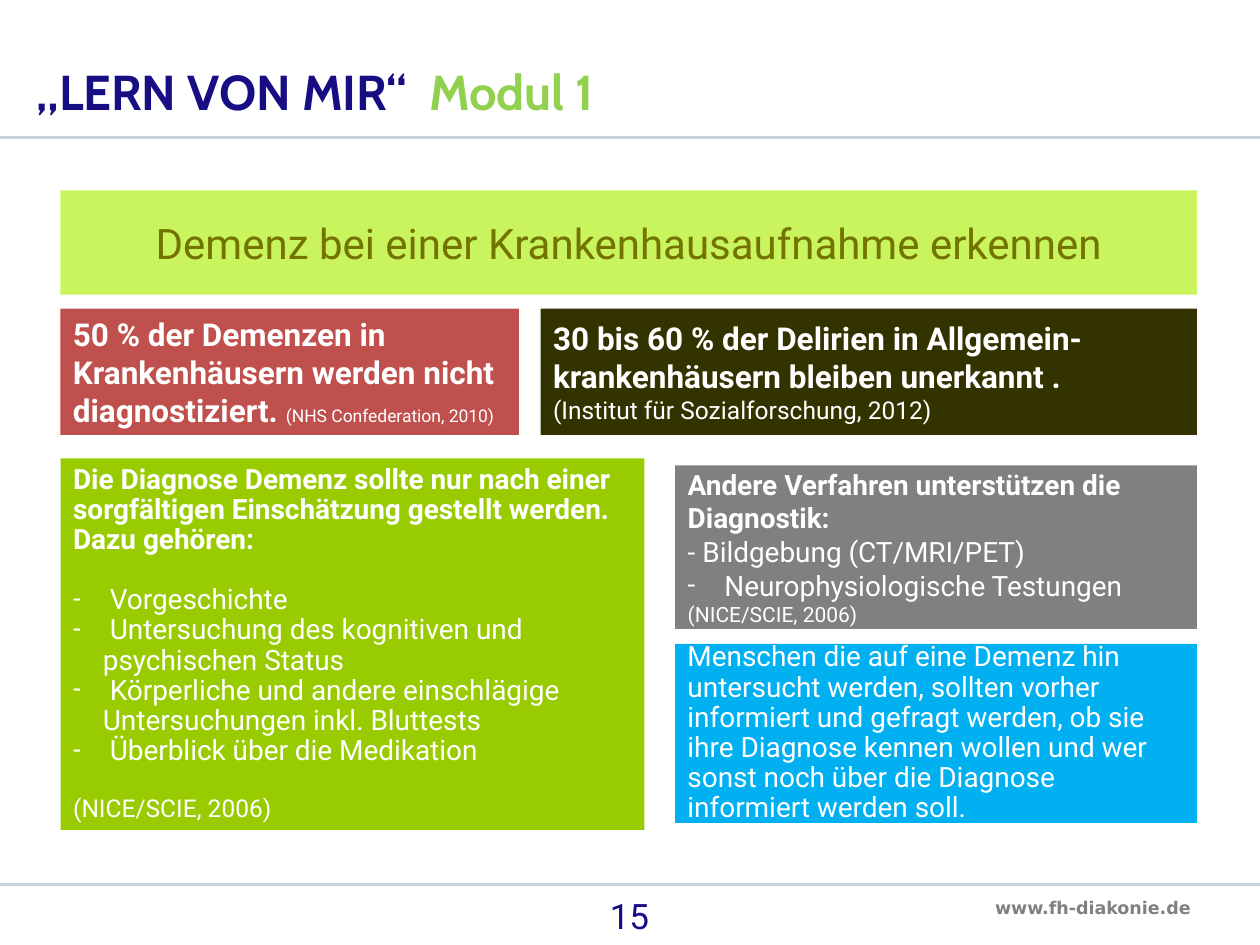
from lxml import etree
from pptx import Presentation, util as u
from pptx.dml.color import RGBColor
from pptx.enum import shapes, text
from pptx.oxml.ns import qn

NAVY = RGBColor(0x17, 0x0E, 0x83)
LIGHT_GREEN = RGBColor(0x92, 0xD0, 0x50)
LIME = RGBColor(0xC9, 0xF4, 0x5E)
OLIVE = RGBColor(0x73, 0x73, 0x00)
RED = RGBColor(0xC0, 0x50, 0x4D)
DARK_OLIVE = RGBColor(0x33, 0x33, 0x00)
GREEN = RGBColor(0x99, 0xCC, 0x00)
GREY = RGBColor(0x80, 0x80, 0x80)
BLUE = RGBColor(0x00, 0xB0, 0xF0)
RULE = RGBColor(0xC8, 0xD2, 0xDC)
WHITE = RGBColor(0xFF, 0xFF, 0xFF)

# Layout in centimetres
SLIDE_WIDTH, SLIDE_HEIGHT = 25.4, 19.05
LEFT, RIGHT = 1.22, 24.13
RIGHT_COLUMN = 13.61
DELIRIUM_LEFT = 10.9
RULES = (2.77, 17.83)
TITLE_TAB = 7.92
BULLET_INDENT = 0.6
GAP = 17  # points, one line of body text

# Content: a paragraph is a list of runs (text, size, bold)
TITLE = [("„LERN VON MIR“\t", NAVY), ("Modul 1", LIGHT_GREEN)]
HEADLINE = [[("Demenz bei einer Krankenhausaufnahme erkennen", 24, False)]]
DEMENTIA = [[("50 % der Demenzen in Krankenhäusern werden nicht diagnostiziert. ", 18, True),
             ("(NHS Confederation, 2010)", 10, False)]]
DELIRIUM = [
    [("30 bis 60 % der Delirien in Allgemein-krankenhäusern bleiben unerkannt .", 18, True)],
    [("(Institut für Sozialforschung, 2012)", 14, False)],
]
ASSESSMENT = [
    [("Die Diagnose Demenz sollte nur nach einer sorgfältigen Einschätzung "
      "gestellt werden. Dazu gehören:", 16, True)],
    [(" Vorgeschichte", 16, False)],
    [(" Untersuchung des kognitiven und psychischen Status", 16, False)],
    [(" Körperliche und andere einschlägige Untersuchungen inkl. Bluttests", 16, False)],
    [(" Überblick über die Medikation", 16, False)],
    [("(NICE/SCIE, 2006)", 14, False)],
]
METHODS = [
    [("Andere Verfahren unterstützen die Diagnostik:", 16, True)],
    [("- Bildgebung (CT/MRI/PET)", 16, False)],
    [(" Neurophysiologische Testungen", 16, False)],
    [("(NICE/SCIE, 2006)", 12, False)],
]
CONSENT = [[("Menschen die auf eine Demenz hin untersucht werden, sollten vorher informiert "
             "und gefragt werden, ob sie ihre Diagnose kennen wollen und wer sonst noch über "
             "die Diagnose informiert werden soll.", 16, False)]]


def place(shape, left, top, right, bottom):
    shape.left, shape.top = u.Cm(left), u.Cm(top)
    shape.width, shape.height = u.Cm(right - left), u.Cm(bottom - top)


def format_run(run, size, bold, color, name="Roboto"):
    run.font.name, run.font.size, run.font.bold = name, u.Pt(size), bold
    run.font.color.rgb = color


def set_bullet(paragraph, bulleted):
    properties = paragraph._p.get_or_add_pPr()
    indent = u.Cm(BULLET_INDENT) if bulleted else 0
    properties.set("marL", str(indent))
    properties.set("indent", str(-indent))
    if bulleted:
        etree.SubElement(properties, qn("a:buFont")).set("typeface", "Roboto")
        etree.SubElement(properties, qn("a:buChar")).set("char", "-")
    else:
        etree.SubElement(properties, qn("a:buNone"))


def fill_box(shape, fill, paragraphs, color=WHITE, align=text.PP_ALIGN.LEFT,
             spacing=1.0, bullets=(), gaps=()):
    """Colour a box and write its paragraphs; bullets and gaps hold paragraph indexes."""
    shape.fill.solid()
    shape.fill.fore_color.rgb = fill
    shape.line.fill.background()
    frame = shape.text_frame
    frame.word_wrap = True
    frame.auto_size = text.MSO_AUTO_SIZE.NONE
    frame.vertical_anchor = text.MSO_ANCHOR.MIDDLE
    for index, runs in enumerate(paragraphs):
        paragraph = frame.add_paragraph() if index else frame.paragraphs[0]
        set_bullet(paragraph, index in bullets)
        paragraph.alignment = align
        paragraph.line_spacing = spacing
        paragraph.space_before = u.Pt(GAP if index in gaps else 0)
        for content, size, bold in runs:
            run = paragraph.add_run()
            run.text = content
            format_run(run, size, bold, color)


def add_box(slide, bounds, fill, paragraphs, **options):
    shape = slide.shapes.add_shape(shapes.MSO_SHAPE.RECTANGLE, 0, 0, 0, 0)
    shape.shadow.inherit = False
    place(shape, *bounds)
    fill_box(shape, fill, paragraphs, **options)


def add_label(slide, bounds, content, size, bold, color, name, align, wrap):
    label = slide.shapes.add_textbox(0, 0, 0, 0)
    place(label, *bounds)
    label.text_frame.word_wrap = wrap
    label.text_frame.text = content
    paragraph = label.text_frame.paragraphs[0]
    paragraph.alignment = align
    format_run(paragraph.runs[0], size, bold, color, name)


def add_title(title):
    place(title, 0.48, 1.09, 17.42, 2.57)
    frame = title.text_frame
    frame.auto_size = text.MSO_AUTO_SIZE.NONE
    frame.vertical_anchor = text.MSO_ANCHOR.BOTTOM
    paragraph = frame.paragraphs[0]
    tabs = etree.SubElement(paragraph._p.get_or_add_pPr(), qn("a:tabLst"))
    etree.SubElement(tabs, qn("a:tab"), pos=str(u.Cm(TITLE_TAB)), algn="l")
    paragraph.alignment = text.PP_ALIGN.LEFT
    paragraph.line_spacing = 0.9
    for content, color in TITLE:
        run = paragraph.add_run()
        run.text = content
        format_run(run, 28, True, color, "Cabin")


def main():
    presentation = Presentation()
    presentation.slide_width = u.Cm(SLIDE_WIDTH)
    presentation.slide_height = u.Cm(SLIDE_HEIGHT)
    slide = presentation.slides.add_slide(presentation.slide_layouts.get_by_name("Two Content"))
    title, assessment, methods = slide.placeholders

    # Title and horizontal rules
    add_title(title)
    for y in RULES:
        rule = slide.shapes.add_connector(
            shapes.MSO_CONNECTOR.STRAIGHT, 0, u.Cm(y), u.Cm(SLIDE_WIDTH), u.Cm(y))
        rule.line.color.rgb = RULE
        rule.line.width = u.Pt(1.5)
        etree.SubElement(rule._element.spPr, qn("a:effectLst"))

    # Headline and key figures
    add_box(slide, (LEFT, 3.84, RIGHT, 5.94), LIME, HEADLINE,
            color=OLIVE, align=text.PP_ALIGN.CENTER)
    add_box(slide, (LEFT, 6.22, 10.46, 8.77), RED, DEMENTIA)
    add_box(slide, (DELIRIUM_LEFT, 6.22, RIGHT, 8.77), DARK_OLIVE, DELIRIUM)

    # Lists and advice
    place(assessment, LEFT, 9.24, 12.99, 16.73)
    fill_box(assessment, GREEN, ASSESSMENT, spacing=0.9, bullets=range(1, 5), gaps=(1, 5))
    place(methods, RIGHT_COLUMN, 9.38, RIGHT, 12.68)
    fill_box(methods, GREY, METHODS, bullets=(2,))
    add_box(slide, (RIGHT_COLUMN, 12.98, RIGHT, 16.59), BLUE, CONSENT, spacing=0.9)

    # Footer
    add_label(slide, (9.73, 17.91, 15.65, 19.05), "15", 20, False, NAVY,
              "Roboto", text.PP_ALIGN.CENTER, True)
    add_label(slide, (19.81, 17.96, 24.33, 18.64), "www.fh-diakonie.de", 10, True, GREY,
              "DejaVu Sans", text.PP_ALIGN.LEFT, False)

    presentation.save("out.pptx")


if __name__ == "__main__":
    main()
